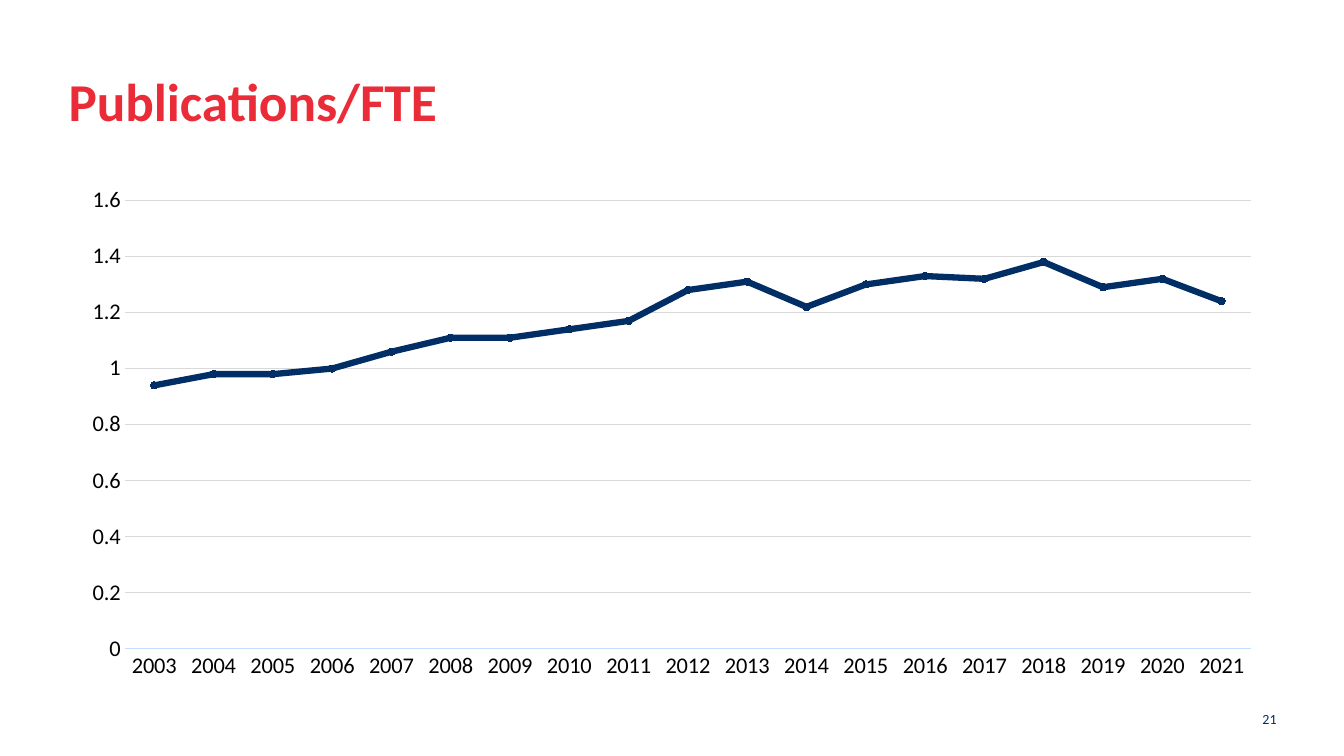
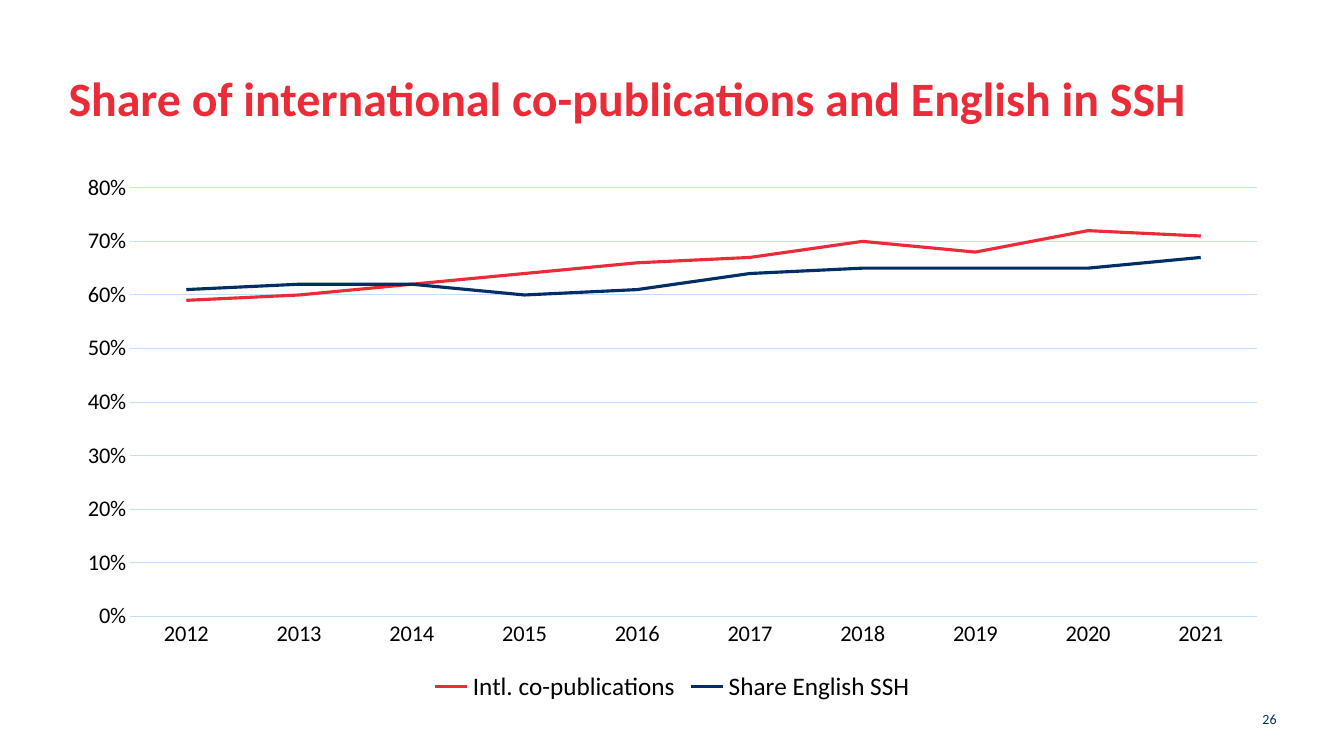
from dataclasses import dataclass
from typing import Any

from pptx import Presentation
from pptx.chart.data import CategoryChartData
from pptx.dml.color import RGBColor
from pptx.enum.chart import (XL_CHART_TYPE, XL_LEGEND_POSITION,
                             XL_MARKER_STYLE, XL_TICK_MARK)
from pptx.enum.text import MSO_ANCHOR, PP_ALIGN
from pptx.util import Emu, Pt

LINE = XL_CHART_TYPE.LINE
LINE_MARKERS = XL_CHART_TYPE.LINE_MARKERS
CIRCLE = XL_MARKER_STYLE.CIRCLE
NO_TICK = XL_TICK_MARK.NONE
BOTTOM = XL_LEGEND_POSITION.BOTTOM
TOP, MIDDLE = MSO_ANCHOR.TOP, MSO_ANCHOR.MIDDLE
LEFT, RIGHT = PP_ALIGN.LEFT, PP_ALIGN.RIGHT

EMU_PER_PX = 9144  # 100 px to the inch
BLANK_LAYOUT = 6
FONT = "Calibri"
COLOURS = {"navy": "002E65", "red": "EA2C38", "black": "000000",
           "pale_blue": "C2DEFF", "grey": "D9D9D9"}


@dataclass(frozen=True)
class Box:
    left: int
    top: int
    width: int
    height: int

    def emu(self) -> list[Emu]:
        return [px(n) for n in (self.left, self.top, self.width, self.height)]


@dataclass(frozen=True)
class TextStyle:
    box: Box
    colour: str
    bold: bool
    align: Any
    frame_format: dict[str, Any]


@dataclass(frozen=True)
class Trend:
    name: str
    colour: str
    values: list[float]


@dataclass(frozen=True)
class ChartSlide:
    title: str
    title_size: float
    page: int
    box: Box
    first_year: int
    trends: list[Trend]
    line_width: float
    grid: str
    maximum: float
    step: float
    number_format: str = "General"
    markers: bool = False
    legend: bool = False


# Shared text styles
TITLE = TextStyle(
    Box(68, 68, 1197, 87), "red", True, LEFT,
    {"word_wrap": True, "vertical_anchor": TOP, "margin_left": 0,
     "margin_right": 0, "margin_top": 0, "margin_bottom": 0})
PAGE_NUMBER = TextStyle(
    Box(976, 693, 300, 40), "navy", False, RIGHT,
    {"word_wrap": True, "vertical_anchor": MIDDLE})

# Slide content
SLIDES = [
    ChartSlide(
        "Publications/FTE", 38, 21, Box(68, 175, 1197, 510), 2003,
        [Trend("Series 1", "navy",
               [0.94, 0.98, 0.98, 1, 1.06, 1.11, 1.11, 1.14, 1.17, 1.28,
                1.31, 1.22, 1.3, 1.33, 1.32, 1.38, 1.29, 1.32, 1.24])],
        line_width=4.5, grid="grey", maximum=1.6, step=0.2, markers=True),
    ChartSlide(
        "Share of international co-publications and English in SSH", 34.2, 26,
        Box(63, 162, 1208, 539), 2012,
        [Trend("Intl. co-publications", "red",
               [0.59, 0.6, 0.62, 0.64, 0.66, 0.67, 0.7, 0.68, 0.72, 0.71]),
         Trend("Share English SSH", "navy",
               [0.61, 0.62, 0.62, 0.6, 0.61, 0.64, 0.65, 0.65, 0.65, 0.67])],
        line_width=2.25, grid="pale_blue", maximum=0.8, step=0.1,
        number_format="0%", legend=True),
]


def px(length: int) -> Emu:
    return Emu(length * EMU_PER_PX)


def rgb(colour: str) -> RGBColor:
    return RGBColor.from_string(COLOURS[colour])


def apply(target: Any, values: dict[str, Any]) -> None:
    for name, value in values.items():
        setattr(target, name, value)


def style_font(font: Any, size: float, colour: str, bold: bool = False) -> None:
    apply(font, {"name": FONT, "size": Pt(size), "bold": bold})
    font.color.rgb = rgb(colour)


def style_line(line: Any, colour: str, width: float) -> None:
    line.color.rgb = rgb(colour)
    line.width = Pt(width)


def add_text(slide: Any, text: str, size: float, style: TextStyle) -> None:
    frame = slide.shapes.add_textbox(*style.box.emu()).text_frame
    apply(frame, style.frame_format)
    paragraph = frame.paragraphs[0]
    paragraph.alignment = style.align
    run = paragraph.add_run()
    run.text = text
    style_font(run.font, size, style.colour, style.bold)


def style_axes(chart: Any, content: ChartSlide) -> None:
    years, values = chart.category_axis, chart.value_axis
    for axis in (years, values):
        apply(axis, {"major_tick_mark": NO_TICK, "minor_tick_mark": NO_TICK})
        style_font(axis.tick_labels.font, 16, "black")
    years.has_major_gridlines = False
    style_line(years.format.line, "pale_blue", 0.75)
    apply(values, {"minimum_scale": 0, "maximum_scale": content.maximum,
                   "major_unit": content.step, "has_major_gridlines": True})
    apply(values.tick_labels, {"number_format": content.number_format,
                               "number_format_is_linked": False})
    values.format.line.fill.background()
    style_line(values.major_gridlines.format.line, content.grid, 0.75)


def style_trends(chart: Any, content: ChartSlide) -> None:
    plot = chart.plots[0]
    plot.vary_by_categories = False
    for series, trend in zip(plot.series, content.trends):
        series.smooth = False
        style_line(series.format.line, trend.colour, content.line_width)
        if content.markers:
            apply(series.marker, {"style": CIRCLE, "size": 5})
            marker = series.marker.format
            marker.fill.solid()
            marker.fill.fore_color.rgb = rgb(trend.colour)
            style_line(marker.line, trend.colour, 0.75)


def add_trend_chart(slide: Any, content: ChartSlide) -> None:
    data = CategoryChartData(number_format=content.number_format)
    year_count = len(content.trends[0].values)
    data.categories = [str(content.first_year + i) for i in range(year_count)]
    for trend in content.trends:
        data.add_series(trend.name, trend.values)
    kind = LINE_MARKERS if content.markers else LINE
    chart = slide.shapes.add_chart(kind, *content.box.emu(), data).chart
    apply(chart, {"has_title": False, "has_legend": content.legend})
    style_font(chart.font, 10, "navy")
    style_axes(chart, content)
    style_trends(chart, content)
    if content.legend:
        apply(chart.legend, {"position": BOTTOM, "include_in_layout": False})
        style_font(chart.legend.font, 18, "black")


def main() -> None:
    deck = Presentation()
    apply(deck, {"slide_width": px(1333), "slide_height": px(750)})
    for content in SLIDES:
        slide = deck.slides.add_slide(deck.slide_layouts[BLANK_LAYOUT])
        add_text(slide, content.title, content.title_size, TITLE)
        add_trend_chart(slide, content)
        add_text(slide, str(content.page), 10, PAGE_NUMBER)
    deck.save("out.pptx")


if __name__ == "__main__":
    main()
